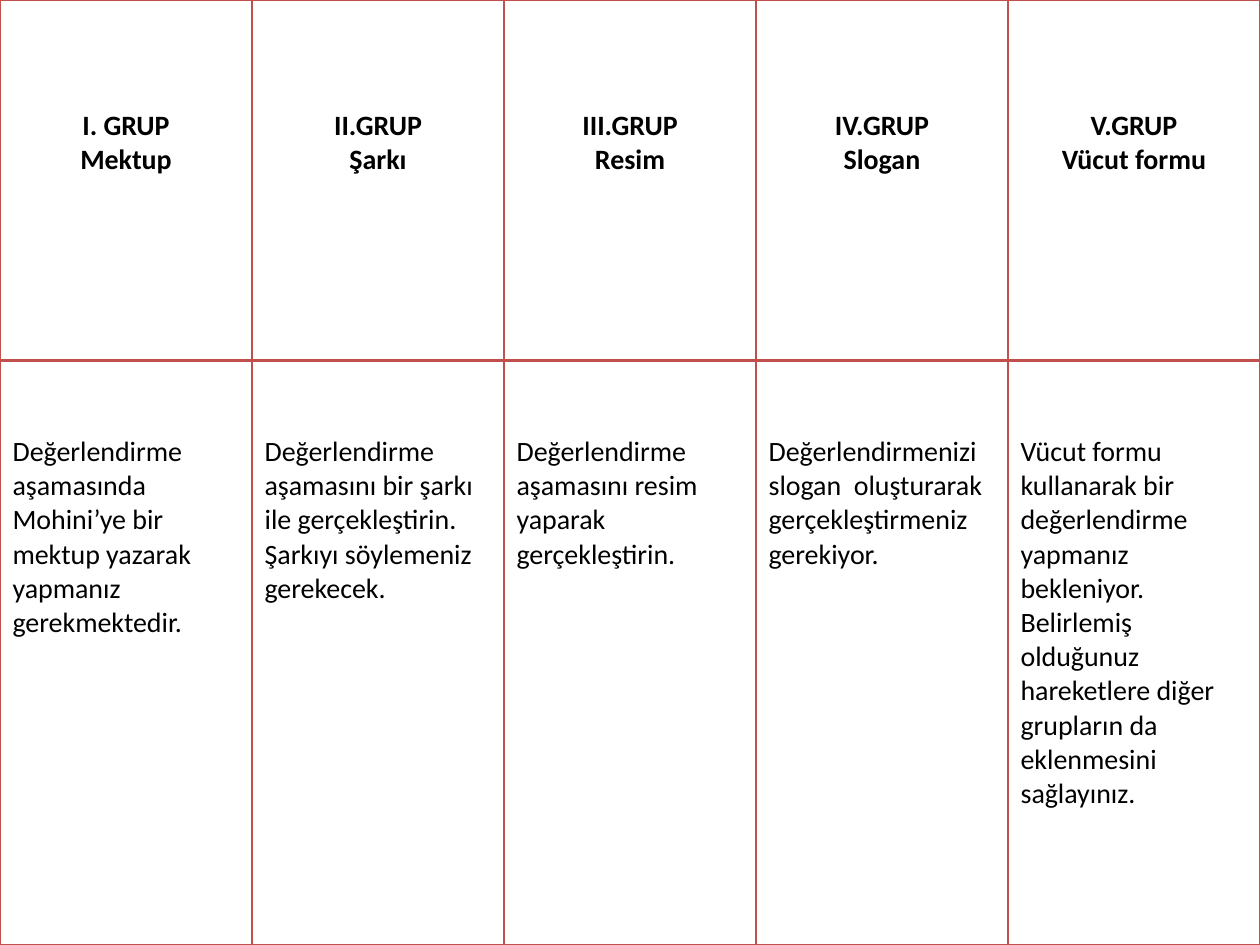
from pptx import Presentation
from pptx.dml.color import RGBColor
from pptx.enum.text import PP_ALIGN
from pptx.oxml.ns import qn
from pptx.util import Inches, Pt
from lxml.etree import SubElement

RED, BLACK, WHITE = "C0504D", "000000", "FFFFFF"
GROUPS = [
    ("I. GRUP", "Mektup",
     "Değerlendirme aşamasında Mohini’ye bir mektup yazarak yapmanız "
     "gerekmektedir."),
    ("II.GRUP", "Şarkı",
     "Değerlendirme aşamasını bir şarkı ile gerçekleştirin. "
     "Şarkıyı söylemeniz gerekecek."),
    ("III.GRUP", "Resim",
     "Değerlendirme aşamasını resim yaparak gerçekleştirin."),
    ("IV.GRUP", "Slogan",
     "Değerlendirmenizi slogan  oluşturarak gerçekleştirmeniz gerekiyor."),
    ("V.GRUP", "Vücut formu",
     "Vücut formu kullanarak bir değerlendirme yapmanız bekleniyor. "
     "Belirlemiş olduğunuz hareketlere diğer grupların da eklenmesini "
     "sağlayınız."),
]


def color(code):
    return RGBColor.from_string(code)


def add_borders(cell, **widths):
    """Draw red cell borders; widths in points, keyed by side L, R, T, B."""
    props = cell._tc.get_or_add_tcPr()
    for side in "LRTB":
        line = SubElement(props, qn(f"a:ln{side}"), w=str(Pt(widths.get(side, 1))))
        fill = SubElement(line, qn("a:solidFill"))
        SubElement(fill, qn("a:srgbClr"), val=RED)


def fill_cell(cell, lines, top, bold, align):
    cell.fill.solid()
    cell.fill.fore_color.rgb = color(WHITE)
    cell.margin_top = top
    cell.text_frame.text = "\n".join(lines)
    for para in cell.text_frame.paragraphs:
        para.alignment = align
        font = para.font
        font.name, font.size, font.bold = "Calibri", Pt(16), bold
        font.color.rgb = color(BLACK)


def add_groups(slide, left, top, width, height):
    """Place a column per group: heading above, task below."""
    table = slide.shapes.add_table(
        2, len(GROUPS), left, top, width, height).table
    table.first_row = table.horz_banding = False
    head = Inches(2.86)
    table.rows[0].height = head
    table.rows[1].height = height - head
    for col, (name, form, task) in enumerate(GROUPS):
        title, body = table.cell(0, col), table.cell(1, col)
        add_borders(title, B=2)
        add_borders(body, T=2)
        fill_cell(title, [name, form], Inches(0.86), True, PP_ALIGN.CENTER)
        fill_cell(body, [task], Inches(0.59), False, PP_ALIGN.LEFT)


def main():
    deck = Presentation()
    deck.slide_width, deck.slide_height = Inches(10), Inches(7.5)
    slide = deck.slides.add_slide(deck.slide_layouts[6])
    add_groups(slide, 0, 0, deck.slide_width, deck.slide_height)
    deck.save("out.pptx")


if __name__ == "__main__":
    main()
